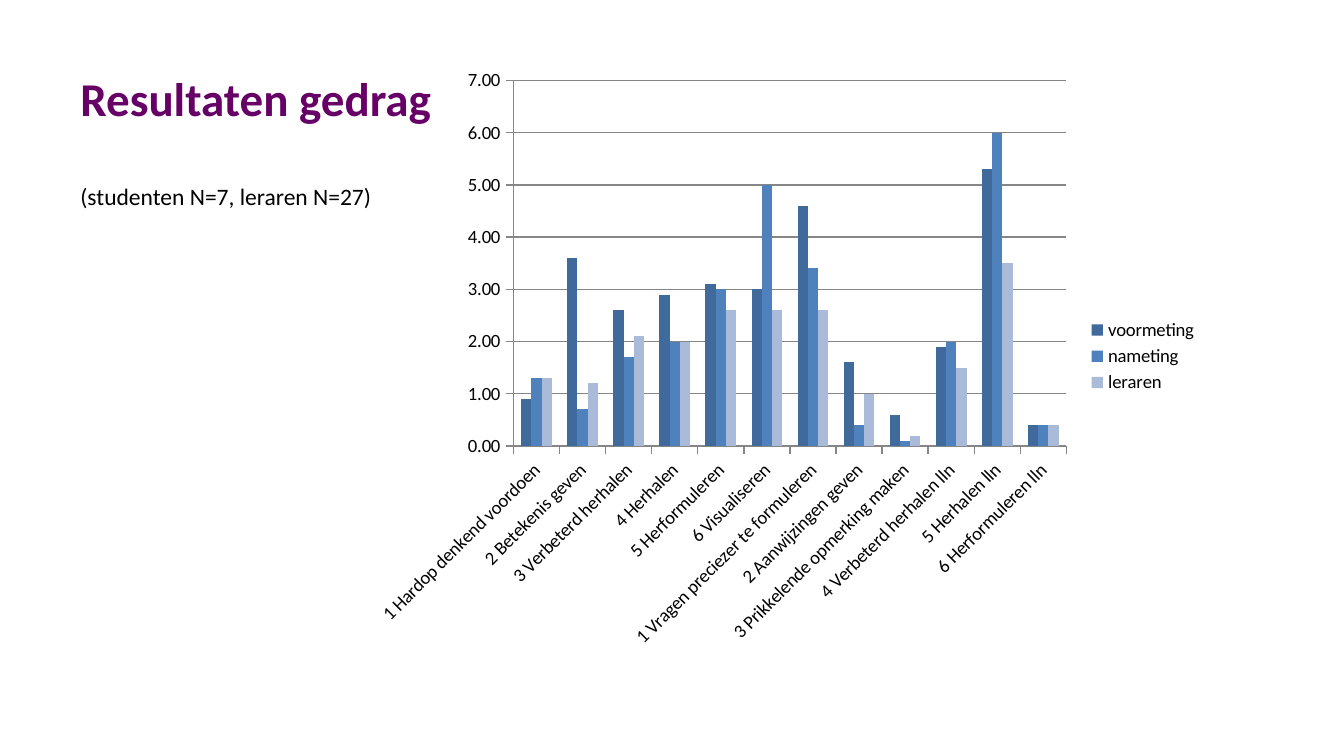
from dataclasses import dataclass

from pptx import Presentation
from pptx.chart.data import CategoryChartData
from pptx.dml.color import RGBColor as Rgb
from pptx.enum.chart import XL_CHART_TYPE as ChartType
from pptx.enum.chart import XL_LEGEND_POSITION as LegendPosition
from pptx.enum.chart import XL_TICK_MARK as TickMark
from pptx.enum.text import MSO_ANCHOR as Anchor
from pptx.oxml import parse_xml
from pptx.oxml.ns import nsdecls, qn
from pptx.util import Cm, Pt


@dataclass(frozen=True)
class Theme:
    font: str = "Calibri"
    heading: str = "660066"
    text: str = "000000"
    grid: str = "868686"
    bars: tuple = ("406A9C", "4F81BD", "AABAD9")
    heading_size: float = 25.2
    sample_size: float = 12.6
    chart_size: float = 10


THEME = Theme()
HEADING = "Resultaten gedrag"
SAMPLE = "(studenten N=7, leraren N=27)"
BEHAVIOURS = [
    "1 Hardop denkend voordoen",
    "2 Betekenis geven",
    "3 Verbeterd herhalen",
    "4 Herhalen",
    "5 Herformuleren",
    "6 Visualiseren",
    "1 Vragen preciezer te formuleren",
    "2 Aanwijzingen geven",
    "3 Prikkelende opmerking maken",
    "4 Verbeterd herhalen lln",
    "5 Herhalen lln",
    "6 Herformuleren lln",
]
MEASUREMENTS = {
    "voormeting": [0.9, 3.6, 2.6, 2.9, 3.1, 3, 4.6, 1.6, 0.6, 1.9, 5.3, 0.4],
    "nameting": [1.3, 0.7, 1.7, 2, 3, 5, 3.4, 0.4, 0.1, 2, 6, 0.4],
    "leraren": [1.3, 1.2, 2.1, 2, 2.6, 2.6, 2.6, 1, 0.2, 1.5, 3.5, 0.4],
}
PLOT_AREA = {"x": 0.18, "y": 0.04, "w": 0.65, "h": 0.61}


def set_font(font, size, color, bold=False):
    font.name = THEME.font
    font.size = Pt(size)
    font.bold = bold
    font.color.rgb = Rgb.from_string(color)


def write(paragraph, text, *, size, color, bold=False, before=0):
    paragraph.space_before = Pt(before)
    run = paragraph.add_run()
    run.text = text
    set_font(run.font, size, color, bold)


def add_intro(slide):
    intro = slide.shapes.add_textbox(Cm(1.27), Cm(0.58), Cm(7.49), Cm(4.14))
    frame = intro.text_frame
    frame.word_wrap = True
    frame.vertical_anchor = Anchor.MIDDLE
    write(frame.paragraphs[0], HEADING, size=THEME.heading_size,
          color=THEME.heading, bold=True)
    write(frame.add_paragraph(), SAMPLE, size=THEME.sample_size,
          color=THEME.text, before=30)


def place_plot(chart):
    plot_area = chart.element.find(".//" + qn("c:plotArea"))
    for layout in plot_area.findall(qn("c:layout")):
        plot_area.remove(layout)
    modes = '<c:xMode val="edge"/><c:yMode val="edge"/>'
    sizes = "".join(f'<c:{side} val="{share}"/>' for side, share in PLOT_AREA.items())
    plot_area.insert(0, parse_xml(
        f'<c:layout {nsdecls("c")}><c:manualLayout><c:layoutTarget val="inner"/>'
        f"{modes}{sizes}</c:manualLayout></c:layout>"))


def add_results(slide):
    results = CategoryChartData(number_format="0.00")
    results.categories = BEHAVIOURS
    for name, scores in MEASUREMENTS.items():
        results.add_series(name, scores)
    chart = slide.shapes.add_chart(
        ChartType.COLUMN_CLUSTERED, Cm(6.81), Cm(1.07), Cm(16.08), Cm(11.33), results
    ).chart
    set_font(chart.font, THEME.chart_size, THEME.text)
    chart.has_title = False
    chart.has_legend = True
    chart.legend.position = LegendPosition.RIGHT
    chart.legend.include_in_layout = False

    columns = chart.plots[0]
    columns.gap_width = 150
    columns.overlap = 0
    columns.vary_by_categories = False
    for measurement, color in zip(columns.series, THEME.bars):
        measurement.format.fill.solid()
        measurement.format.fill.fore_color.rgb = Rgb.from_string(color)

    behaviours, scale = chart.category_axis, chart.value_axis
    scale.minimum_scale, scale.maximum_scale, scale.major_unit = 0, 7, 1
    scale.has_major_gridlines = True
    scale.tick_labels.number_format = "0.00"
    scale.tick_labels.number_format_is_linked = False
    for axis in (behaviours, scale):
        axis.major_tick_mark = TickMark.OUTSIDE
        axis.minor_tick_mark = TickMark.NONE
        set_font(axis.tick_labels.font, THEME.chart_size, THEME.text)
    for line in (behaviours.format.line, scale.format.line,
                 scale.major_gridlines.format.line):
        line.color.rgb = Rgb.from_string(THEME.grid)
        line.width = Pt(0.75)
    label_body = chart.element.find(f".//{qn('c:catAx')}/{qn('c:txPr')}/{qn('a:bodyPr')}")
    label_body.set("rot", str(-45 * 60000))
    label_body.set("vert", "horz")
    place_plot(chart)


def main():
    deck = Presentation()
    deck.slide_width, deck.slide_height = Cm(25.4), Cm(14.29)
    slide = deck.slides.add_slide(deck.slide_layouts[6])
    add_intro(slide)
    add_results(slide)
    deck.save("out.pptx")


if __name__ == "__main__":
    main()
